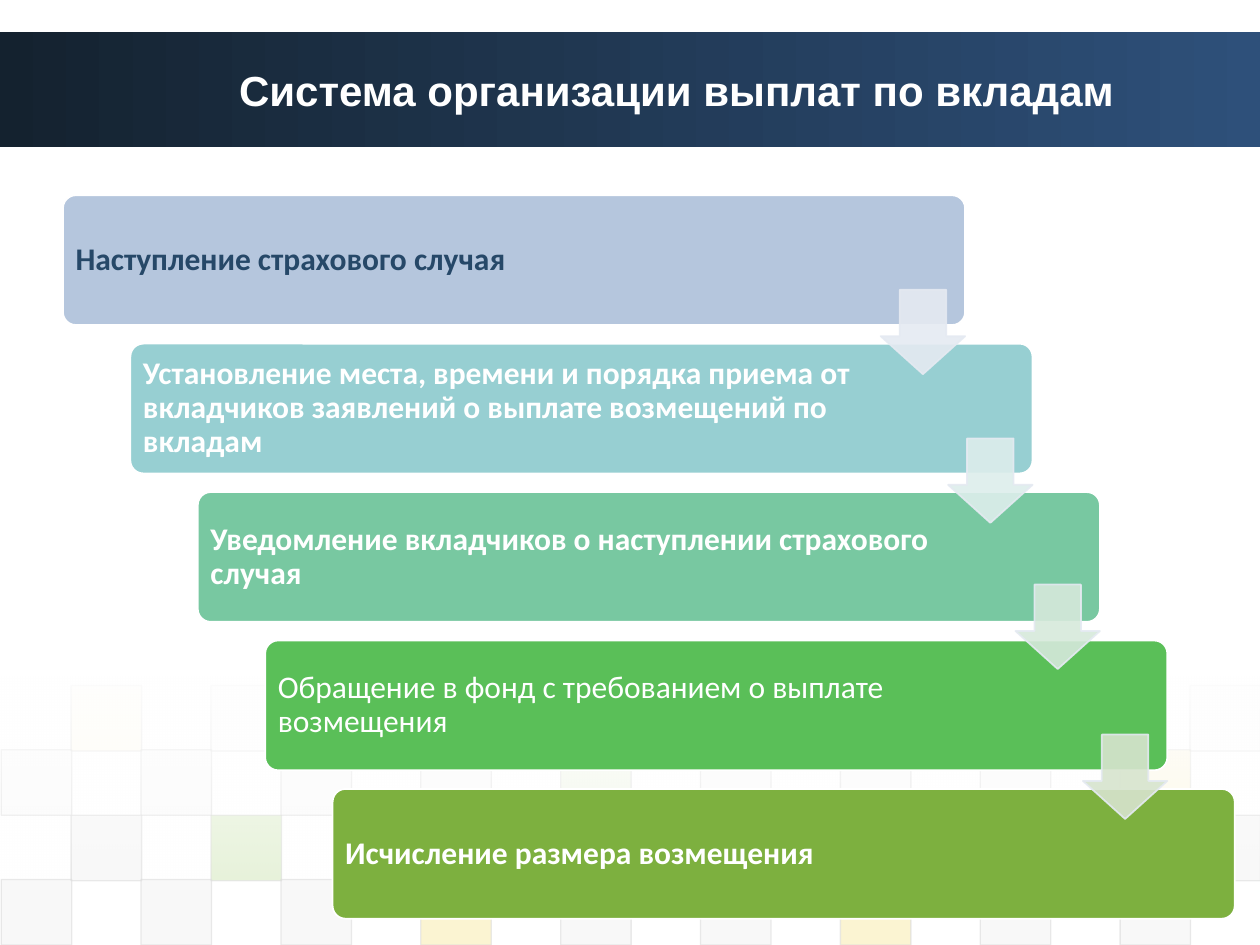
import pptx
import pptx.dml.color
import pptx.enum.shapes
import pptx.enum.text
import pptx.oxml.ns
import pptx.util
from dataclasses import dataclass

Inches = pptx.util.Inches
SHAPE = pptx.enum.shapes.MSO_SHAPE
ALIGN = pptx.enum.text.PP_ALIGN
MIDDLE = pptx.enum.text.MSO_ANCHOR.MIDDLE


@dataclass(frozen=True)
class Theme:
    white: str = "FFFFFF"
    band_dark: str = "14222F"
    band_light: str = "2E507A"
    navy: str = "264868"
    tile: str = "DDDDDD"
    tile_pale: str = "EAEAEA"
    yellow: str = "EFC821"
    green: str = "8AC246"
    arrow_line: str = "E5EAF2"
    title_size: int = 24
    step_size: int = 18


theme = Theme()


def add_block(kind, place, fill, line=None, width=1, alphas=()):
    """Add a shape; a pair of fills is a gradient, alphas go to fill then line."""
    shape = page.shapes.add_shape(kind, *[Inches(value) for value in place])
    shape.shadow.inherit = False
    if isinstance(fill, tuple):
        shape.fill.gradient()
        for stop, color in zip(shape.fill.gradient_stops, fill):
            stop.color.rgb = pptx.dml.color.RGBColor.from_string(color)
    else:
        shape.fill.solid()
        shape.fill.fore_color.rgb = pptx.dml.color.RGBColor.from_string(fill)
    if line:
        shape.line.color.rgb = pptx.dml.color.RGBColor.from_string(line)
        shape.line.width = pptx.util.Pt(width)
    else:
        shape.line.fill.background()
    colors = list(shape.element.spPr.iter(pptx.oxml.ns.qn("a:srgbClr")))
    for color, alpha in zip(colors, alphas):
        element = color.makeelement(pptx.oxml.ns.qn("a:alpha"), {"val": str(alpha * 1000)})
        color.append(element)
    return shape


def write_text(shape, text, color, frame_format, para_format, font_format):
    frame = shape.text_frame
    frame.word_wrap = True
    frame.vertical_anchor = MIDDLE
    para = frame.paragraphs[0]
    span = para.add_run()
    span.text = text
    span.font.color.rgb = pptx.dml.color.RGBColor.from_string(color)
    for target, values in ((frame, frame_format), (para, para_format), (span.font, font_format)):
        for name, value in values.items():
            setattr(target, name, value)


deck = pptx.Presentation()
deck.slide_width, deck.slide_height = Inches(10), Inches(7.5)
page = deck.slides.add_slide(deck.slide_layouts[6])

# Title band
band = add_block(SHAPE.RECTANGLE, (0, 0.25, 10, 0.92), (theme.band_dark, theme.band_light))
band.fill.gradient_angle = 0

# Mosaic: top, fill opacity, and the colour in each filled column
even = dict.fromkeys(range(0, 17, 2), theme.tile)
mosaic = [
    (5.44, 5, {1: theme.yellow, 3: theme.tile_pale, 17: theme.tile_pale}),
    (5.95, 10, {**even, 8: theme.green, 16: theme.yellow}),
    (6.47, 20, {1: theme.tile, 3: theme.green, 17: theme.tile}),
    (6.98, 20, {**even, 6: theme.yellow, 12: theme.yellow}),
]
for top, opacity, tiles in mosaic:
    for column, color in tiles.items():
        place = (0.01 + 0.555 * column, top, 0.56, 0.52)
        add_block(SHAPE.RECTANGLE, place, color, theme.tile, 0.75, (opacity, 60))

veil = add_block(SHAPE.RECTANGLE, (0, 5.37, 10, 1.62), (theme.white, theme.white), alphas=(90, 0))
veil.fill.gradient_angle = 270

title = page.shapes.add_textbox(Inches(1.33), Inches(0.25), Inches(8.08), Inches(0.92))
write_text(
    title, "Система организации выплат по вкладам", theme.white, {},
    {"alignment": ALIGN.CENTER},
    {"name": "Arial", "size": pptx.util.Pt(theme.title_size), "bold": True},
)

# Staircase of steps: text, fill, text colour, bold
steps = [
    ("Наступление страхового случая", "B5C6DD", theme.navy, True),
    ("Установление места, времени и порядка приема от вкладчиков заявлений "
     "о выплате возмещений по вкладам", "97CFD2", theme.white, True),
    ("Уведомление вкладчиков о наступлении страхового случая", "78C8A1", theme.white, True),
    ("Обращение в фонд с требованием о выплате возмещения", "5ABF58", theme.white, False),
    ("Исчисление размера возмещения", "7DB03F", theme.white, True),
]
step_insets = {
    "margin_left": Inches(0.07), "margin_right": Inches(1.27),
    "margin_top": Inches(0.07), "margin_bottom": Inches(0.07),
}
for index, (text, fill, color, bold) in enumerate(steps):
    place = (0.5 + 0.535 * index, 1.55 + 1.178 * index, 7.16, 1.03)
    step = add_block(SHAPE.ROUNDED_RECTANGLE, place, fill, theme.white)
    step.adjustments[0] = 0.1
    write_text(
        step, text, color, step_insets,
        {"alignment": ALIGN.LEFT, "line_spacing": 0.9},
        {"name": "Calibri", "size": pptx.util.Pt(theme.step_size), "bold": bold},
    )

# Arrows from each step to the next
arrows = [(2.3, "E5EAF2"), (3.48, "DDEEEC"), (4.64, "D6E9DB"), (5.83, "D7E4CE")]
for index, (top, fill) in enumerate(arrows):
    place = (6.99 + 0.535 * index, top, 0.67, 0.67)
    arrow = add_block(SHAPE.DOWN_ARROW, place, fill, theme.arrow_line, alphas=(90, 90))
    # The first adjustment is the shaft width, the second the head length
    arrow.adjustments[0], arrow.adjustments[1] = 0.55, 0.45

deck.save("out.pptx")
